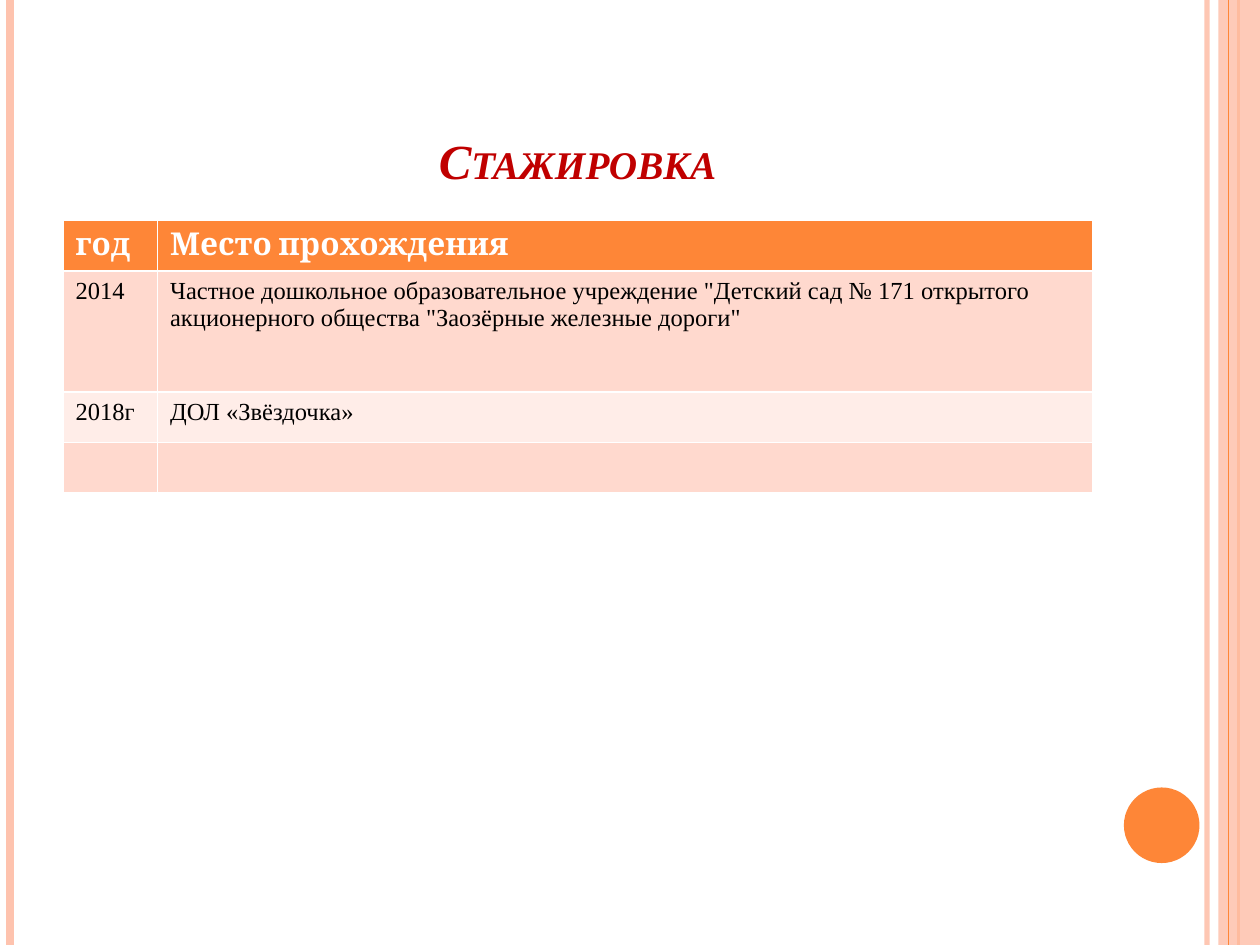
"""Build the internship slide: a title, a table of places and side stripes."""
from lxml import etree
from pptx import Presentation
from pptx.dml.color import RGBColor
from pptx.enum.shapes import MSO_CONNECTOR, MSO_SHAPE
from pptx.enum.text import MSO_ANCHOR, PP_ALIGN
from pptx.oxml.ns import qn
from pptx.util import Inches, Pt

STRAIGHT = MSO_CONNECTOR.STRAIGHT
RECTANGLE, OVAL = MSO_SHAPE.RECTANGLE, MSO_SHAPE.OVAL
BOTTOM, CENTER = MSO_ANCHOR.BOTTOM, PP_ALIGN.CENTER

ORANGE = RGBColor.from_string("FE8637")
PEACH = RGBColor.from_string("FEC3AE")
THEME = {
    "title": {"name": "Times New Roman", "size": Pt(28), "bold": True, "italic": True,
              "color": RGBColor.from_string("C00000")},
    "header": {"name": "Cambria", "size": Pt(18), "bold": True,
               "color": RGBColor.from_string("FFFFFF")},
    "body": {"name": "Times New Roman", "size": Pt(14), "bold": False,
             "color": RGBColor.from_string("000000")},
    "bands": [RGBColor.from_string("FFEDE8"), RGBColor.from_string("FFD9CE")],
}


def write(para, text, style):
    span = para.add_run()
    span.text = text
    for name, value in style.items():
        if name == "color":
            span.font.color.rgb = value
        else:
            setattr(span.font, name, value)
    return span


def set_opacity(part, percent):
    color = next(part.iter(qn("a:srgbClr")))
    etree.SubElement(color, qn("a:alpha"), val=str(percent * 1000))


deck = Presentation()
deck.slide_width, deck.slide_height = Inches(10), Inches(7.5)
page = deck.slides.add_slide(deck.slide_layouts[6])

stripes = [
    (9.58, PEACH, 3, 93),
    (0.08, PEACH, 4.5, 100),
    (9.83, ORANGE, 1.5, 100),
    (9.75, ORANGE, 0.75, 100),
]
for left, color, width, opacity in stripes:
    if left == 9.75:
        panel = page.shapes.add_shape(RECTANGLE, Inches(9.67), 0, Inches(0.33), Inches(7.5))
        panel.shadow.inherit = False
        panel.fill.solid()
        panel.fill.fore_color.rgb = PEACH
        panel.line.fill.background()
        set_opacity(panel.fill._xPr, 87)
    stripe = page.shapes.add_connector(STRAIGHT, Inches(left), 0, Inches(left), Inches(7.5))
    stripe.line.color.rgb = color
    stripe.line.width = Pt(width)
    if opacity < 100:
        set_opacity(stripe.line._ln, opacity)
    etree.SubElement(stripe._element.spPr, qn("a:effectLst"))

circle = page.shapes.add_shape(OVAL, Inches(8.92), Inches(6.25), Inches(0.6), Inches(0.6))
circle.shadow.inherit = False
circle.fill.solid()
circle.fill.fore_color.rgb = ORANGE
circle.line.fill.background()

title = page.shapes.add_textbox(Inches(0.5), Inches(0.3), Inches(8.17), Inches(1.25))
title.text_frame.word_wrap = True
title.text_frame.vertical_anchor = BOTTOM
heading = title.text_frame.paragraphs[0]
heading.alignment = CENTER
write(heading, "Стажировка", THEME["title"])._r.get_or_add_rPr().set("cap", "small")

rows = [
    (0.4, "год", "Место прохождения"),
    (0.96, "2014", 'Частное дошкольное образовательное учреждение "Детский сад № 171 открытого '
                   'акционерного общества "Заозёрные железные дороги"'),
    (0.4, "2018г", "ДОЛ «Звёздочка»"),
    (0.4, "", ""),
]
table = page.shapes.add_table(len(rows), 2, Inches(0.5), Inches(1.75),
                              Inches(8.17), Inches(2.16)).table
for column, width in zip(table.columns, (0.75, 7.42)):
    column.width = Inches(width)
for index, (height, *texts) in enumerate(rows):
    table.rows[index].height = Inches(height)
    for cell, text in zip(table.rows[index].cells, texts):
        cell.fill.solid()
        cell.fill.fore_color.rgb = THEME["bands"][index % 2] if index else ORANGE
        if text:
            write(cell.text_frame.paragraphs[0], text, THEME["body" if index else "header"])

deck.save("out.pptx")
